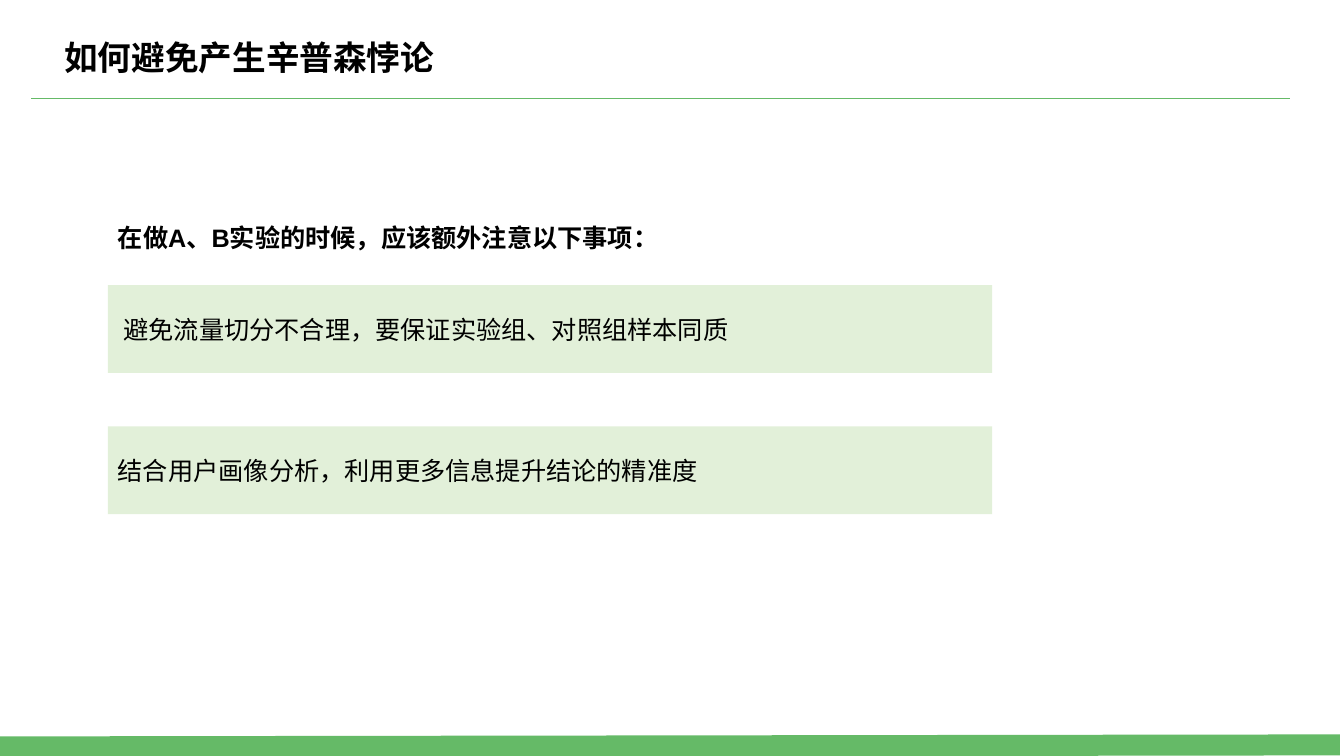
"""Build the slide on avoiding Simpson's paradox."""
from dataclasses import dataclass

from lxml.etree import SubElement
from pptx import Presentation
from pptx.dml.color import RGBColor as Color
from pptx.enum.shapes import MSO_CONNECTOR as Link, MSO_SHAPE as Form
from pptx.enum.text import MSO_ANCHOR as Anchor, PP_ALIGN as Align
from pptx.oxml.ns import qn
from pptx.slide import Slide
from pptx.text.text import TextFrame
from pptx.util import Inches, Pt


@dataclass(frozen=True)
class Theme:
    """Hold the colours, font and type sizes."""
    green: Color = Color.from_string("65BA67")
    pale: Color = Color.from_string("E2F0D9")
    ink: Color = Color.from_string("000000")
    font: str = "Arial"
    title: int = 24
    body: int = 18


@dataclass(frozen=True)
class Rule:
    """Describe a straight line."""
    start: tuple[float, float]
    end: tuple[float, float]
    weight: float


@dataclass(frozen=True)
class Label:
    """Describe a bold heading."""
    text: str
    box: tuple[float, float, float, float]
    size: int


THEME = Theme()
RULES = [
    Rule((0.31, 0.98), (12.79, 0.98), 1),
    Rule((0, 7.41), (13.29, 7.39), 15),
]
LABELS = [
    Label("如何避免产生辛普森悖论", (0.54, 0.32, 6.67, 0.5), THEME.title),
    Label("在做A、B实验的时候，应该额外注意以下事项：",
          (1.07, 2.16, 9.88, 0.4), THEME.body),
]
TIPS = [
    " 避免流量切分不合理，要保证实验组、对照组样本同质",
    "结合用户画像分析，利用更多信息提升结论的精准度",
]
TIP_TOP, TIP_STEP = 2.83, 1.4


def write(frame: TextFrame, text: str, size: int, bold: bool = False) -> None:
    """Fill a text frame with one styled paragraph."""
    frame.word_wrap = True
    para = frame.paragraphs[0]
    para.text = text
    para.alignment = Align.LEFT
    para.font.name = THEME.font
    para.font.size = Pt(size)
    para.font.bold = bold
    para.font.color.rgb = THEME.ink


def add_rule(slide: Slide, rule: Rule) -> None:
    """Draw a green line without a shadow."""
    ends = [Inches(v) for v in (*rule.start, *rule.end)]
    line = slide.shapes.add_connector(Link.STRAIGHT, *ends)
    line.line.color.rgb = THEME.green
    line.line.width = Pt(rule.weight)
    SubElement(line._element.spPr, qn("a:effectLst"))


def add_label(slide: Slide, label: Label) -> None:
    """Place a bold heading."""
    box = slide.shapes.add_textbox(*(Inches(v) for v in label.box))
    write(box.text_frame, label.text, label.size, bold=True)


def add_tip(slide: Slide, text: str, top: float) -> None:
    """Place a tip on a pale green bar."""
    bar = slide.shapes.add_shape(
        Form.RECTANGLE, Inches(1.07), Inches(top), Inches(8.77), Inches(0.87))
    bar.shadow.inherit = False
    bar.fill.solid()
    bar.fill.fore_color.rgb = THEME.pale
    bar.line.fill.background()
    bar.text_frame.vertical_anchor = Anchor.MIDDLE
    write(bar.text_frame, text, THEME.body)


def main() -> None:
    """Build and save the deck."""
    deck = Presentation()
    deck.slide_width, deck.slide_height = Inches(13.33), Inches(7.5)
    slide = deck.slides.add_slide(deck.slide_layouts[6])
    for rule in RULES:
        add_rule(slide, rule)
    for label in LABELS:
        add_label(slide, label)
    for row, tip in enumerate(TIPS):
        add_tip(slide, tip, TIP_TOP + row * TIP_STEP)
    deck.save("out.pptx")


if __name__ == "__main__":
    main()
